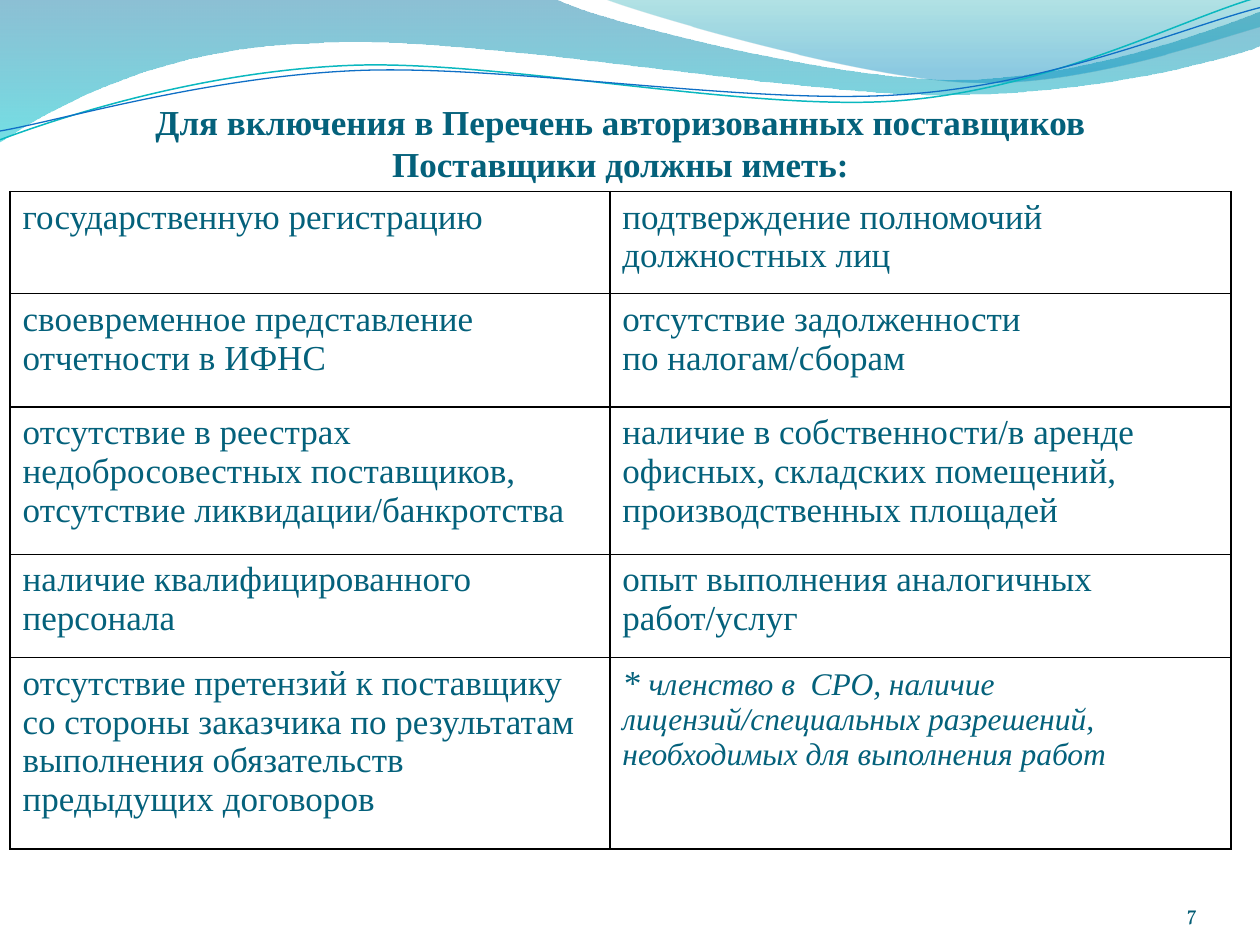
from dataclasses import dataclass
from math import cos, radians, sin

from lxml.etree import SubElement
from pptx import Presentation
from pptx.dml.color import RGBColor
from pptx.enum.text import MSO_ANCHOR, PP_ALIGN
from pptx.oxml.ns import qn
from pptx.util import Inches, Pt


@dataclass(frozen=True)
class Theme:
    text: str = "04617B"
    number: str = "045D75"
    border: str = "000000"
    teal: str = "0AB8BF"
    blue: str = "0F6FC6"
    font: str = "Times New Roman"
    number_font: str = "Vollkorn"
    body: int = 20
    note: int = 18
    small: int = 12


THEME = Theme()
BODY = {"size": THEME.body, "name": THEME.font, "color": THEME.text}
TITLE = {**BODY, "bold": True}
STAR = {**BODY, "italic": True}
NOTE = {**STAR, "size": THEME.note}
NUMBER = {"size": THEME.small, "name": THEME.number_font, "color": THEME.number}
LINE_TILT = 357.3

# Each wave is a list of segments: a start or a line (one point), a curve (three points).
BACK_WAVE = [
    [(0, 0)], [(4.4, -0.01)],
    [(4.76, 0.17), (6.64, 0.63), (7.58, 0.63)],
    [(8.53, 0.63), (9.58, 0.26), (10, 0.09)], [(10.01, 0.36)],
    [(9.83, 0.44), (8.7, 0.76), (7.46, 0.75)],
    [(6.22, 0.75), (3.82, 0.28), (2.57, 0.34)],
    [(1.29, 0.36), (0.46, 0.83), (-0.01, 1.13)], [(0, 0)],
]
FRONT_WAVE = [
    [(4.79, -0.01)],
    [(5.09, 0.11), (6.82, 0.62), (7.69, 0.65)],
    [(8.56, 0.69), (9.61, 0.32), (10, 0.21)], [(10, 0)], [(4.79, -0.01)],
]
TEAL_LINE = [
    [(0, 1.11)],
    [(0.48, 0.93), (1.58, 0.57), (2.77, 0.52)],
    [(3.95, 0.47), (5.93, 0.89), (7.13, 0.8)],
    [(8.33, 0.71), (9.38, 0.15), (9.98, -0.02)],
]
BLUE_LINE = [
    [(0, 1.04)],
    [(0.47, 0.96), (1.64, 0.61), (2.83, 0.56)],
    [(4.03, 0.51), (5.97, 0.84), (7.17, 0.75)],
    [(8.36, 0.67), (9.41, 0.21), (10, 0.06)],
]

# A cell is a list of paragraphs, a paragraph a list of (text, format) spans.
REQUIREMENTS = [
    [[[("государственную регистрацию", BODY)]],
     [[("подтверждение полномочий", BODY)], [("должностных лиц", BODY)]]],
    [[[("своевременное представление отчетности в ИФНС", BODY)]],
     [[("отсутствие задолженности", BODY)], [("по налогам/сборам", BODY)]]],
    [[[("отсутствие в реестрах", BODY)],
      [("недобросовестных поставщиков, отсутствие ликвидации/банкротства", BODY)]],
     [[("наличие в собственности/в аренде офисных, складских помещений, "
        "производственных площадей", BODY)]]],
    [[[("наличие квалифицированного персонала", BODY)]],
     [[("опыт выполнения аналогичных работ/услуг", BODY)]]],
    [[[("отсутствие претензий к поставщику со стороны заказчика по результатам "
        "выполнения обязательств предыдущих договоров", BODY)]],
     [[("* ", STAR),
       ("членство в  СРО, наличие лицензий/специальных разрешений, "
        "необходимых для выполнения работ", NOTE)]]],
]


def write(frame, paragraphs, align=PP_ALIGN.LEFT):
    frame.word_wrap = True
    for index, spans in enumerate(paragraphs):
        para = frame.add_paragraph() if index else frame.paragraphs[0]
        para.alignment = align
        for text, style in spans:
            span = para.add_run()
            span.text = text
            for key, value in style.items():
                if key == "color":
                    span.font.color.rgb = RGBColor.from_string(value)
                else:
                    setattr(span.font, key, Pt(value) if key == "size" else value)


def to_local(point, box, rotation):
    """Turn a page point back by the rotation and measure it from the box corner."""
    left, top, width, height = box
    angle = radians(-rotation)
    across, down = point[0] - left - width / 2, point[1] - top - height / 2
    return (Inches(width / 2 + across * cos(angle) - down * sin(angle)),
            Inches(height / 2 + across * sin(angle) + down * cos(angle)))


def add_outline(page, box, outline, close, rotation=0):
    """Add a freeform whose path holds true curves."""
    segments = [[to_local(point, box, rotation) for point in part] for part in outline]
    builder = page.shapes.build_freeform(*segments[0][0])
    builder.add_line_segments([part[-1] for part in segments[1:]], close=close)
    shape = builder.convert_to_shape()
    shape.left, shape.top, shape.width, shape.height = map(Inches, box)
    shape.rotation = rotation
    shape.shadow.inherit = False
    track = next(shape._element.spPr.iter(qn("a:path")))
    for node in list(track):
        track.remove(node)
    track.set("w", str(shape.width))
    track.set("h", str(shape.height))
    for index, part in enumerate(segments):
        kind = "cubicBezTo" if len(part) == 3 else "lnTo" if index else "moveTo"
        node = SubElement(track, qn(f"a:{kind}"))
        for x, y in part:
            SubElement(node, qn("a:pt"), x=str(x), y=str(y))
    if close:
        SubElement(track, qn("a:close"))
    return shape


def add_wave(page, box, outline, stops):
    """Fill a wave from top to bottom with (position, colour, opacity percent) stops."""
    wave = add_outline(page, box, outline, close=True)
    wave.line.fill.background()
    wave.fill.gradient()
    wave.fill.gradient_angle = 270
    for stop, (position, color, _) in zip(wave.fill.gradient_stops, stops):
        stop.position = position
        stop.color.rgb = RGBColor.from_string(color)
    for node, (_, _, opacity) in zip(wave._element.spPr.iter(qn("a:srgbClr")), stops):
        SubElement(node, qn("a:alpha"), val=str(opacity * 1000))


def add_wave_line(page, box, outline, color, width):
    curve = add_outline(page, box, outline, close=False, rotation=LINE_TILT)
    curve.fill.background()
    curve.line.color.rgb = RGBColor.from_string(color)
    curve.line.width = Pt(width)


def add_header_waves(page):
    add_wave(page, (-0.01, -0.01, 10.02, 1.14), BACK_WAVE,
             [(0, "0074A1", 45), (1, "00C6CF", 55)])
    add_wave(page, (4.79, -0.01, 5.21, 0.7), FRONT_WAVE,
             [(0, "00A1A9", 30), (0.8, "008BBF", 45)])
    add_wave_line(page, (-0.02, 0.22, 10.02, 0.71), TEAL_LINE, THEME.teal, 0.85)
    add_wave_line(page, (-0.02, 0.3, 10.03, 0.58), BLUE_LINE, THEME.blue, 0.75)


def add_title(page, box):
    frame = page.shapes.add_textbox(*map(Inches, box)).text_frame
    write(frame, [[("Для включения в Перечень авторизованных поставщиков", TITLE)],
                  [("Поставщики должны иметь:", TITLE)]], PP_ALIGN.CENTER)


def add_borders(cell):
    properties = cell._tc.get_or_add_tcPr()
    for index, side in enumerate(("lnL", "lnR", "lnT", "lnB")):
        line = properties.makeelement(qn(f"a:{side}"), {"w": str(Pt(1))})
        fill = SubElement(line, qn("a:solidFill"))
        SubElement(fill, qn("a:srgbClr"), val=THEME.border)
        properties.insert(index, line)


def add_requirements(page, box, widths, heights):
    table = page.shapes.add_table(len(heights), len(widths), *map(Inches, box)).table
    table.first_row = table.horz_banding = False
    for column, width in zip(table.columns, widths):
        column.width = Inches(width)
    for row, height, contents in zip(table.rows, heights, REQUIREMENTS):
        row.height = Inches(height)
        for cell, paragraphs in zip(row.cells, contents):
            cell.fill.background()
            add_borders(cell)
            write(cell.text_frame, paragraphs)


def add_page_number(page, box):
    frame = page.shapes.add_textbox(*map(Inches, box)).text_frame
    for side in ("left", "top", "right", "bottom"):
        setattr(frame, f"margin_{side}", 0)
    frame.vertical_anchor = MSO_ANCHOR.BOTTOM
    write(frame, [[("7", NUMBER)]], PP_ALIGN.RIGHT)


def main():
    deck = Presentation()
    deck.slide_width, deck.slide_height = Inches(10), Inches(7.5)
    page = deck.slides.add_slide(deck.slide_layouts[6])
    add_header_waves(page)
    add_title(page, (0.28, 0.75, 9.29, 0.77))
    add_requirements(page, (0.08, 1.52, 9.69, 5.22),
                     (4.76, 4.93), (0.81, 0.9, 1.17, 0.82, 1.52))
    add_page_number(page, (8.67, 6.95, 0.83, 0.4))
    deck.save("out.pptx")


if __name__ == "__main__":
    main()
